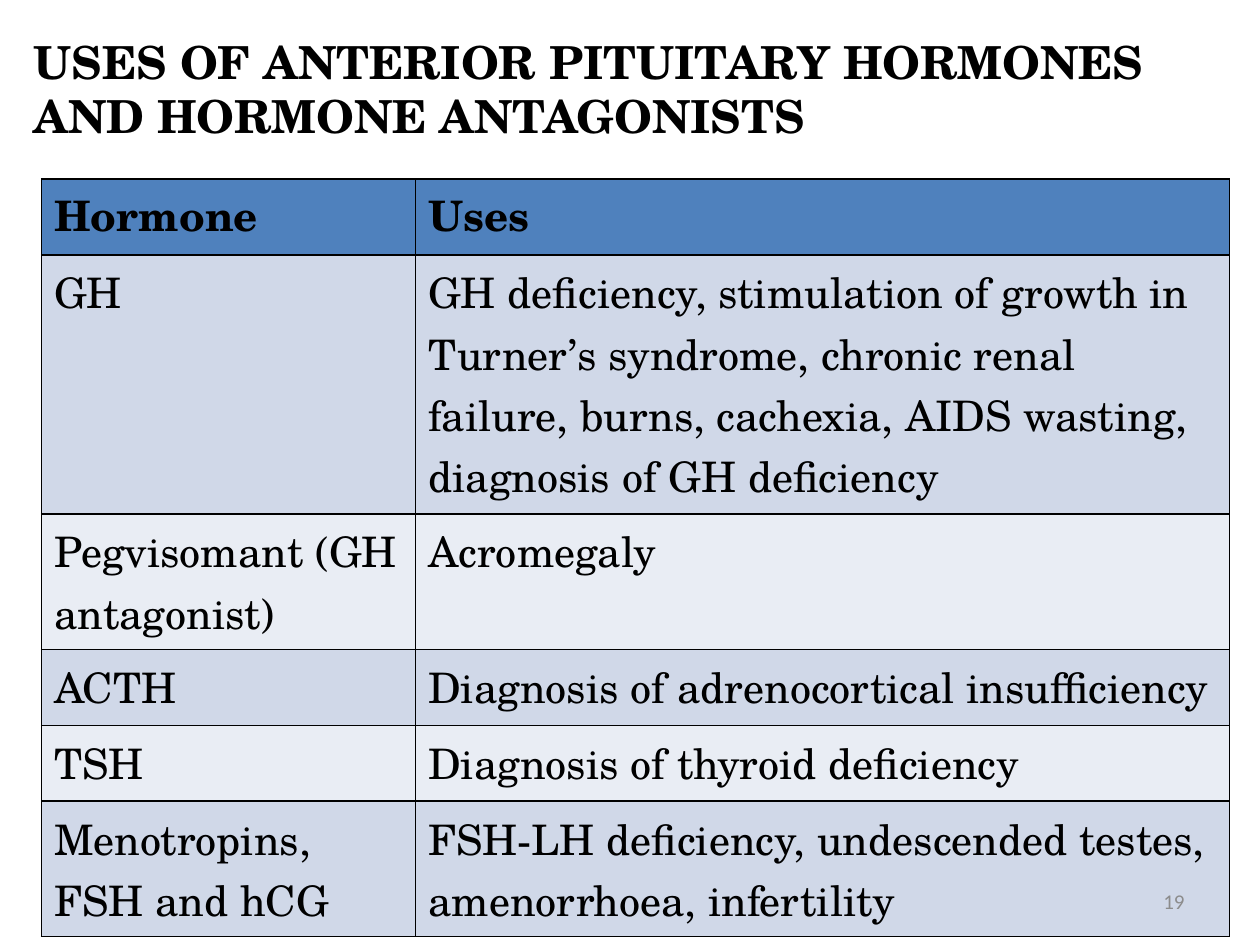
from typing import NamedTuple

from lxml import etree
from pptx import Presentation
from pptx import util as u
from pptx.dml.color import RGBColor
from pptx.enum import text
from pptx.oxml import ns

SERIF = "TeX Gyre Schola"
HEADER_FILL = "4F81BD"
BAND_FILLS = ("D0D8E8", "E9EDF4")
COLUMN_WIDTHS = (213.84, 465.12)


class HormoneRow(NamedTuple):
    hormone: str
    uses: str
    height: float


ROWS = (
    HormoneRow("Hormone", "Uses", 43.4),
    HormoneRow(
        "GH",
        "GH deficiency, stimulation of growth in Turner’s syndrome, chronic renal "
        "failure, burns, cachexia, AIDS wasting, diagnosis of GH deficiency",
        148,
    ),
    HormoneRow("Pegvisomant (GH antagonist)", "Acromegaly", 77.4),
    HormoneRow("ACTH", "Diagnosis of adrenocortical insufficiency", 43.4),
    HormoneRow("TSH", "Diagnosis of thyroid deficiency", 43.4),
    HormoneRow(
        "Menotropins, FSH and hCG",
        "FSH-LH deficiency, undescended testes, amenorrhoea, infertility",
        77.4,
    ),
)


def colour(value: str) -> RGBColor:
    """Turn a hex string into a colour."""
    return RGBColor.from_string(value)


def write(frame, words: str, *, size: float, font: str = SERIF, hue: str = "000000",
          bold: bool = False, align=text.PP_ALIGN.LEFT, leading: float | None = None) -> None:
    """Write one formatted paragraph into a text frame."""
    frame.word_wrap = True
    para = frame.paragraphs[0]
    para.alignment = align
    if leading:
        para.line_spacing = u.Pt(leading)
    span = para.add_run()
    span.text = words
    span.font.name = font
    span.font.size = u.Pt(size)
    span.font.bold = bold
    span.font.color.rgb = colour(hue)


def add_text_box(page, left: float, top: float, width: float, height: float):
    """Add a middle-anchored text box and return its frame."""
    box = page.shapes.add_textbox(u.Pt(left), u.Pt(top), u.Pt(width), u.Pt(height))
    box.text_frame.vertical_anchor = text.MSO_ANCHOR.MIDDLE
    return box.text_frame


def style_cell(cell, fill: str) -> None:
    """Give a cell its fill and thin black borders."""
    properties = cell._tc.get_or_add_tcPr()
    for side in ("a:lnL", "a:lnR", "a:lnT", "a:lnB"):
        line = etree.SubElement(properties, ns.qn(side), w=str(u.Pt(1)))
        solid = etree.SubElement(line, ns.qn("a:solidFill"))
        etree.SubElement(solid, ns.qn("a:srgbClr"), val="000000")
    cell.fill.solid()
    cell.fill.fore_color.rgb = colour(fill)


def add_hormone_table(page, rows: tuple[HormoneRow, ...], left: float, top: float) -> None:
    """Draw the banded table of hormones and their uses."""
    table = page.shapes.add_table(
        len(rows), len(COLUMN_WIDTHS), u.Pt(left), u.Pt(top),
        u.Pt(sum(COLUMN_WIDTHS)), u.Pt(sum(row.height for row in rows)),
    ).table
    for column, width in zip(table.columns, COLUMN_WIDTHS):
        column.width = u.Pt(width)
    for index, row in enumerate(rows):
        table.rows[index].height = u.Pt(row.height)
        fill = BAND_FILLS[(index - 1) % 2] if index else HEADER_FILL
        for cell, words in zip(table.rows[index].cells, (row.hormone, row.uses)):
            style_cell(cell, fill)
            write(cell.text_frame, words, size=24, bold=index == 0, leading=35.1)


def main() -> None:
    """Build the slide and save it."""
    deck = Presentation()
    deck.slide_width, deck.slide_height = u.Pt(720), u.Pt(540)
    page = deck.slides.add_slide(deck.slide_layouts[6])
    title = add_text_box(page, 12.24, 9.36, 690.48, 77.76)
    title.margin_top = u.Pt(8)
    write(title, "USES OF ANTERIOR PITUITARY HORMONES AND HORMONE ANTAGONISTS",
          size=26, bold=True, leading=30.9)
    add_hormone_table(page, ROWS, 23.76, 102.24)
    number = add_text_box(page, 516.24, 500.4, 167.76, 28.8)
    write(number, "19", size=12, font="Calibri", hue="8C8C8C", align=text.PP_ALIGN.RIGHT)
    deck.save("out.pptx")


if __name__ == "__main__":
    main()
